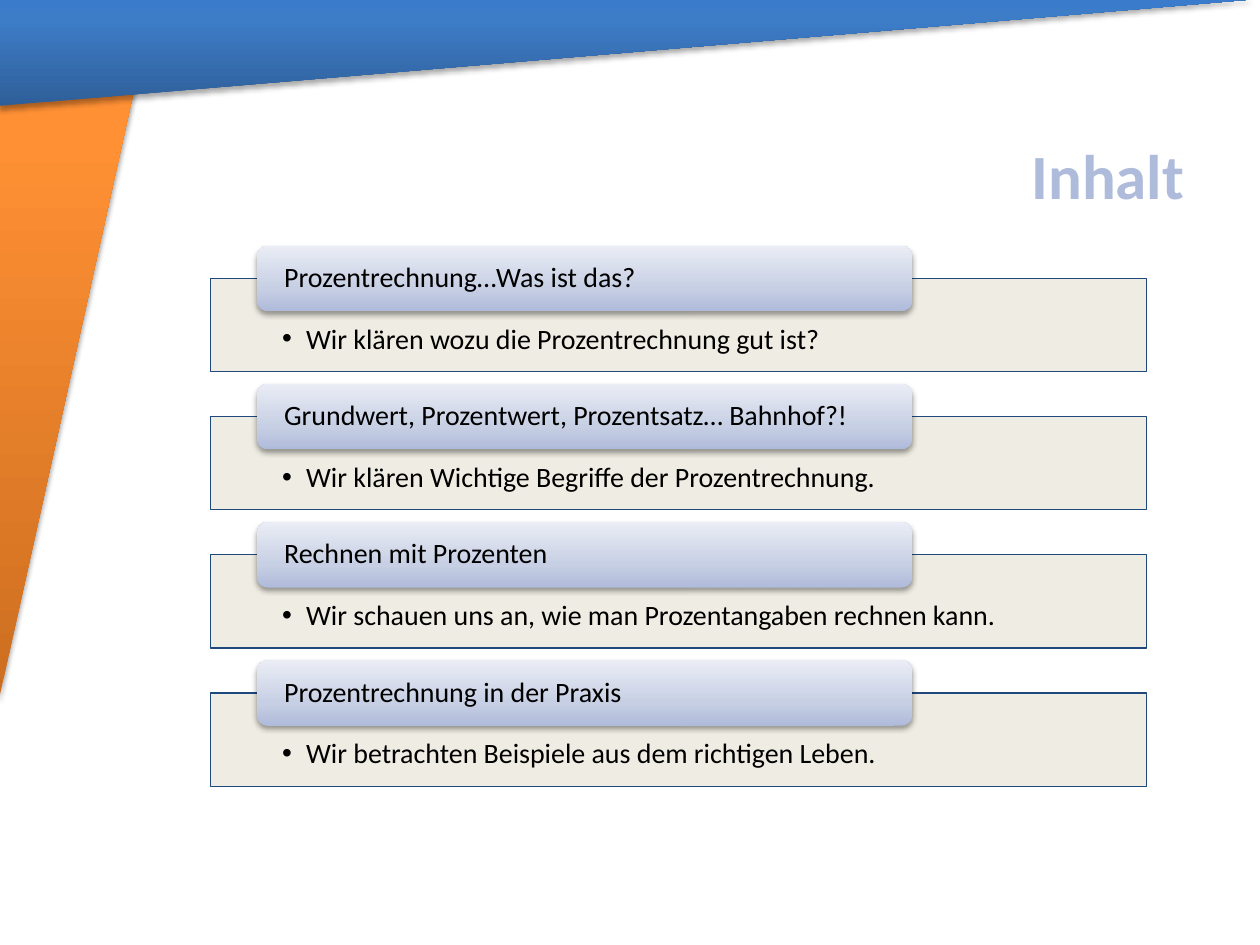
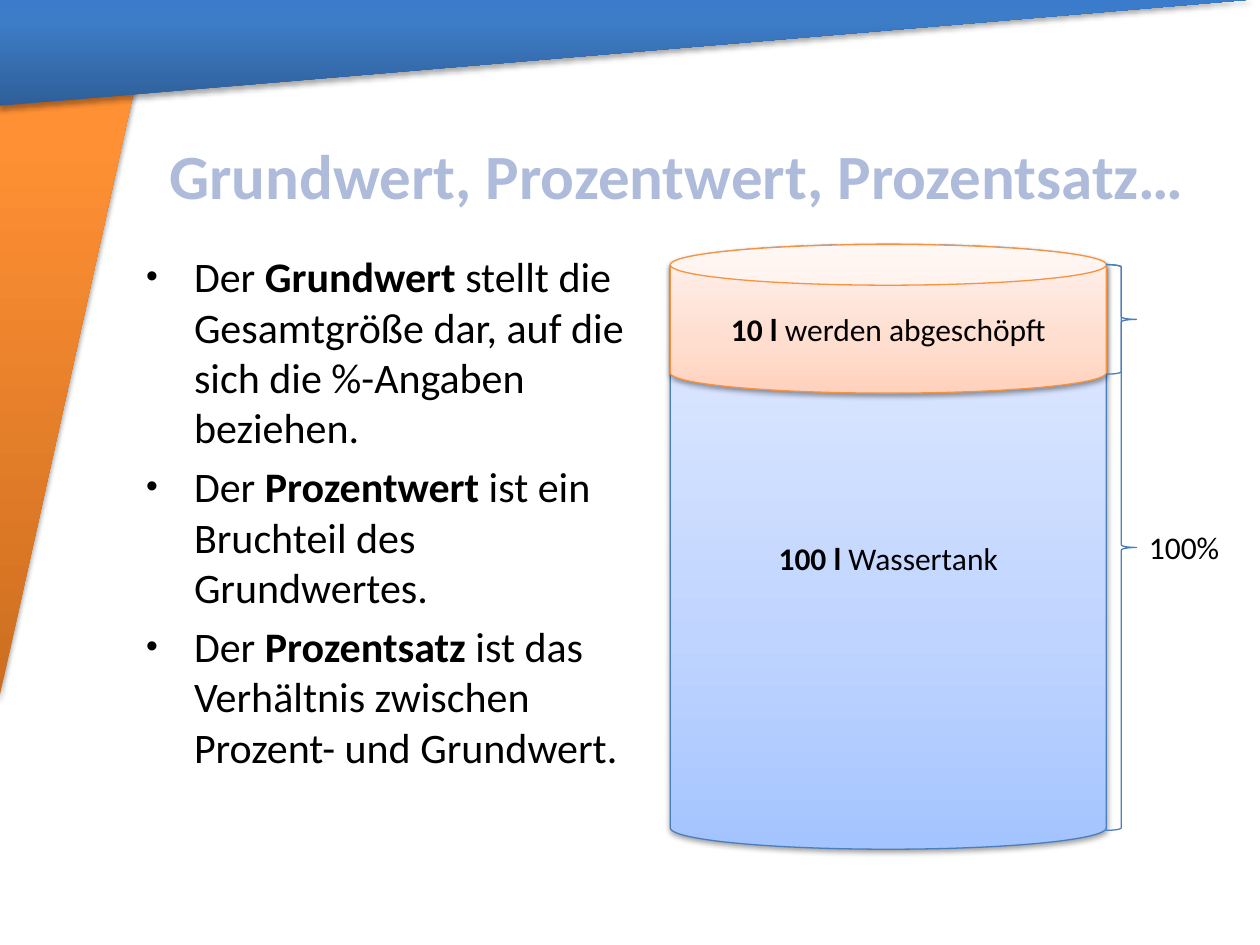
import pptx
import pptx.util
import pptx.dml.color
import pptx.enum.shapes
import pptx.enum.text
import pptx.oxml.ns
from lxml import etree

Inches, Pt, qn = pptx.util.Inches, pptx.util.Pt, pptx.oxml.ns.qn
SHAPE = pptx.enum.shapes.MSO_SHAPE
ALIGN = pptx.enum.text.PP_ALIGN
ANCHOR = pptx.enum.text.MSO_ANCHOR

FONT = "Calibri"
COLORS = {"title": "AEBBDA", "text": "000000", "panel": "EEECE1", "panel_line": "1F497D",
          "water_line": "4B7EBC", "skimmed_line": "F69240", "shadow": "000000"}
GRADIENTS = {
    "orange": [(0, "CC6E20"), (80, "FF9034"), (100, "FF9136")],
    "blue": [(0, "2F5F99"), (80, "3D7CC7"), (100, "3A7CCB")],
    "tab": [(0, "AFBBDA"), (35, "C7CFE4"), (100, "EAEDF5")],
    "water": [(0, "A4C4FF"), (35, "BFD4FF"), (100, "E6EEFF")],
    "skimmed": [(0, "FFD2BD"), (35, "FFDED0"), (100, "FFF2ED")],
}
BANDS_IN_HUNDREDTHS = [
    ("orange", [(-2, 1), (122, 1), (-1, 556)]),
    ("blue", [(-1, 84), (1000, -1), (-1, -1)]),
]

CONTENTS_TITLE = "Inhalt"
CONTENTS = [
    ("Prozentrechnung…Was ist das?", "Wir klären wozu die Prozentrechnung gut ist?"),
    ("Grundwert, Prozentwert, Prozentsatz… Bahnhof?!",
     "Wir klären Wichtige Begriffe der Prozentrechnung."),
    ("Rechnen mit Prozenten", "Wir schauen uns an, wie man Prozentangaben rechnen kann."),
    ("Prozentrechnung in der Praxis", "Wir betrachten Beispiele aus dem richtigen Leben."),
]
TERMS_TITLE = "Grundwert, Prozentwert, Prozentsatz…"
TERMS = [
    [("Der ", False), ("Grundwert", True),
     (" stellt die Gesamtgröße dar, auf die sich die %-Angaben beziehen.", False)],
    [("Der ", False), ("Prozentwert", True), (" ist ein Bruchteil des Grundwertes.", False)],
    [("Der ", False), ("Prozentsatz", True),
     (" ist das Verhältnis zwischen Prozent- und Grundwert.", False)],
]
TANKS = [
    ("water", 4.8, 0.098, [("100 l ", True), ("Wassertank", False)]),
    ("skimmed", 1.18, 0.274, [("10 l ", True), ("werden abgeschöpft", False)]),
]
BRACE_HEIGHTS = [4.49, 0.87]
WHOLE_LABEL = "100%"


def inches(*lengths):
    return [Inches(length) for length in lengths]


def rgb(name):
    return pptx.dml.color.RGBColor.from_string(COLORS[name])


def apply(target, values):
    for name, value in values.items():
        setattr(target, name, value)


def add_color(parent, color, alpha=None):
    node = etree.SubElement(parent, qn("a:srgbClr"), val=color)
    if alpha:
        etree.SubElement(node, qn("a:alpha"), val=str(alpha * 1000))


def paint_gradient(shape, name):
    shape.fill.gradient()
    shape.fill.gradient_angle = 90
    stops = shape.element.spPr.find(".//" + qn("a:gsLst"))
    for stop in list(stops):
        stops.remove(stop)
    for position, color in GRADIENTS[name]:
        add_color(etree.SubElement(stops, qn("a:gs"), pos=str(position * 1000)), color)


def draw_line(shape, color=None):
    if color:
        shape.line.color.rgb = rgb(color)
        shape.line.width = Pt(0.75)
    else:
        shape.line.fill.background()


def drop_shadow(shape, alpha, distance):
    shape.shadow.inherit = False
    effects = shape.element.spPr.find(qn("a:effectLst"))
    shadow = etree.SubElement(effects, qn("a:outerShdw"), blurRad=str(Pt(3.1)),
                              dist=str(Pt(distance)), dir="5400000", rotWithShape="0")
    add_color(shadow, COLORS["shadow"], alpha)


def write(para, spans, size, color="text"):
    for text, bold in spans:
        span = para.add_run()
        span.text = text
        apply(span.font, {"name": FONT, "size": Pt(size), "bold": bold})
        span.font.color.rgb = rgb(color)


def set_bullet(para, indent, percent):
    properties = para._p.get_or_add_pPr()
    properties.set("marL", str(Inches(indent)))
    properties.set("indent", str(-Inches(indent)))
    etree.SubElement(properties, qn("a:buSzPct"), val=str(percent * 1000))
    etree.SubElement(properties, qn("a:buFont"), typeface="Arial")
    etree.SubElement(properties, qn("a:buChar"), char="•")


def place(shape, left, top, width, height):
    apply(shape, dict(zip(("left", "top", "width", "height"),
                          inches(left, top, width, height))))


def set_frame(frame, anchor, margins=(0.1, 0.05, 0.1, 0.05)):
    names = ("margin_left", "margin_top", "margin_right", "margin_bottom")
    apply(frame, dict(zip(names, inches(*margins))))
    apply(frame, {"word_wrap": True, "vertical_anchor": anchor,
                  "auto_size": pptx.enum.text.MSO_AUTO_SIZE.NONE})


def add_page(deck, layout, title, left):
    page = deck.slides.add_slide(deck.slide_layouts[layout])
    box = page.shapes.title
    place(box, left, 0.91, 9.5 - left, 0.95)
    set_frame(box.text_frame, ANCHOR.MIDDLE)
    para = box.text_frame.paragraphs[0]
    para.alignment = ALIGN.RIGHT
    write(para, [(title, True)], 36, "title")
    return page


def move_bands_to_master(deck, page):
    tree = deck.slide_master.shapes.element
    for index, (name, points) in enumerate(BANDS_IN_HUNDREDTHS):
        builder = page.shapes.build_freeform(*points[0], scale=Inches(0.01))
        builder.add_line_segments(points[1:], close=True)
        band = builder.convert_to_shape()
        paint_gradient(band, name)
        draw_line(band)
        drop_shadow(band, 35, 1.8)
        band.element.nvSpPr.cNvPr.set("id", str(100 + index))
        tree.insert(2 + index, band.element)


def add_contents(page):
    first_top, last_top = 2.21, 5.5
    step = (last_top - first_top) / (len(CONTENTS) - 1)
    for row, (heading, detail) in enumerate(CONTENTS):
        top = first_top + row * step
        panel = page.shapes.add_shape(SHAPE.RECTANGLE, *inches(1.67, top, 7.43, 0.74))
        panel.shadow.inherit = False
        panel.fill.solid()
        panel.fill.fore_color.rgb = rgb("panel")
        color = panel.element.spPr.find(qn("a:solidFill")).find(qn("a:srgbClr"))
        etree.SubElement(color, qn("a:alpha"), val="90000")
        draw_line(panel, "panel_line")
        set_frame(panel.text_frame, ANCHOR.TOP, (0.57, 0.37, 0.57, 0.05))
        set_bullet(panel.text_frame.paragraphs[0], 0.19, 100)

        tab = page.shapes.add_shape(SHAPE.ROUNDED_RECTANGLE, *inches(2.04, top - 0.26, 5.2, 0.52))
        paint_gradient(tab, "tab")
        draw_line(tab)
        drop_shadow(tab, 38, 1.6)
        set_frame(tab.text_frame, ANCHOR.MIDDLE, (0.19, 0, 0.19, 0))

        for shape, text in ((panel, detail), (tab, heading)):
            para = shape.text_frame.paragraphs[0]
            apply(para, {"alignment": ALIGN.LEFT, "line_spacing": 0.9})
            write(para, [(text, False)], 16)


def add_terms(page):
    box = page.placeholders[1]
    place(box, 1.06, 1.94, 4.17, 4.76)
    frame = box.text_frame
    set_frame(frame, ANCHOR.TOP)
    for index, spans in enumerate(TERMS):
        para = frame.add_paragraph() if index else frame.paragraphs[0]
        set_bullet(para, 0.38, 80)
        if index == 0:
            para.space_before = Pt(0)
        write(para, spans, 24)


def add_tank(page):
    for name, height, curve, spans in TANKS:
        tank = page.shapes.add_shape(SHAPE.CAN, *inches(5.32, 1.94, 3.46, height))
        tank.adjustments[0] = curve
        paint_gradient(tank, name)
        draw_line(tank, name + "_line")
        drop_shadow(tank, 38, 1.6)
        set_frame(tank.text_frame, ANCHOR.MIDDLE)
        para = tank.text_frame.paragraphs[0]
        para.alignment = ALIGN.CENTER
        write(para, spans, 18)
    for height in BRACE_HEIGHTS:
        brace = page.shapes.add_shape(SHAPE.RIGHT_BRACE, *inches(8.78, 2.1, 0.24, height))
        brace.shadow.inherit = False
        brace.fill.background()
        draw_line(brace, "water_line")
    label = page.shapes.add_textbox(*inches(9.02, 4.14, 0.79, 0.41))
    set_frame(label.text_frame, ANCHOR.TOP)
    write(label.text_frame.paragraphs[0], [(WHOLE_LABEL, False)], 18)


def main():
    deck = pptx.Presentation()
    apply(deck, {"slide_width": Inches(10), "slide_height": Inches(7.5)})
    contents_page = add_page(deck, 5, CONTENTS_TITLE, 1.38)
    move_bands_to_master(deck, contents_page)
    add_contents(contents_page)
    terms_page = add_page(deck, 1, TERMS_TITLE, 1.06)
    add_terms(terms_page)
    add_tank(terms_page)
    deck.save("out.pptx")


if __name__ == "__main__":
    main()
